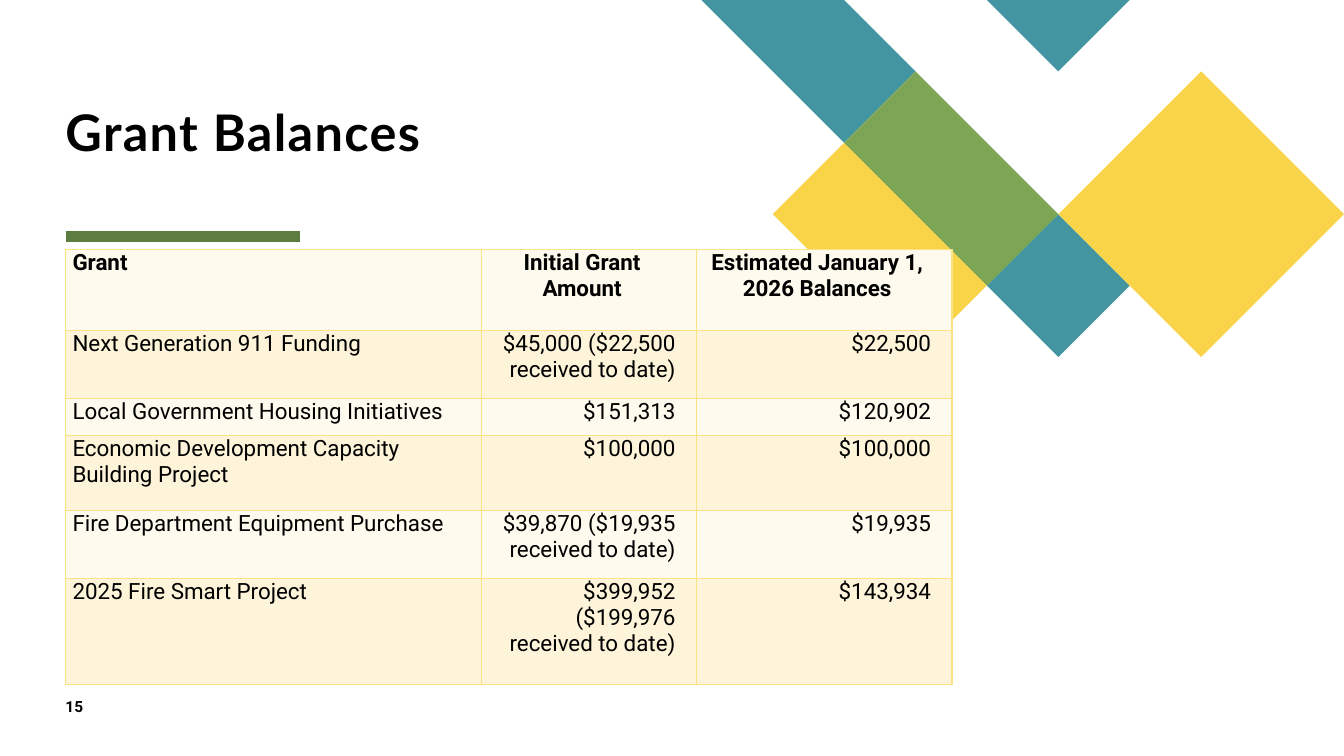
from pptx import Presentation
from pptx.dml.color import RGBColor
from pptx.enum.shapes import MSO_CONNECTOR
from pptx.enum.text import MSO_ANCHOR, PP_ALIGN
from pptx.oxml.ns import qn
from pptx.util import Pt
from lxml import etree

STRAIGHT = MSO_CONNECTOR.STRAIGHT
TOP, BOTTOM = MSO_ANCHOR.TOP, MSO_ANCHOR.BOTTOM
LEFT, CENTER, RIGHT = PP_ALIGN.LEFT, PP_ALIGN.CENTER, PP_ALIGN.RIGHT

BLACK = RGBColor(0x00, 0x00, 0x00)
TEAL = RGBColor(0x44, 0x95, 0xA2)
YELLOW = RGBColor(0xF9, 0xD4, 0x48)
GREEN = RGBColor(0x7C, 0xA6, 0x55)
DARK_GREEN = RGBColor(0x5D, 0x7D, 0x40)
ROW_TINTS = (RGBColor(0xFE, 0xFA, 0xED), RGBColor(0xFD, 0xF4, 0xD9))
GRID_LINE = RGBColor(0xFB, 0xE2, 0x84)

DIAMONDS = [
    (TEAL, [(0, 0), (2, 0), (3, 1), (2, 2)]),
    (TEAL, [(5, 3), (6, 4), (5, 5), (4, 4)]),
    (YELLOW, [(2, 2), (4, 4), (3, 5), (1, 3)]),
    (TEAL, [(4, 0), (6, 0), (5, 1)]),
    (GREEN, [(3, 1), (5, 3), (4, 4), (2, 2)]),
    (YELLOW, [(7, 1), (9, 3), (7, 5), (5, 3)]),
]

GRANTS = [
    ("Grant", "Initial Grant Amount", "Estimated January 1, 2026 Balances"),
    ("Next Generation 911 Funding", "$45,000 ($22,500 received to date)", "$22,500"),
    ("Local Government Housing Initiatives", "$151,313", "$120,902"),
    ("Economic Development Capacity Building Project", "$100,000", "$100,000"),
    ("Fire Department Equipment Purchase", "$39,870 ($19,935 received to date)", "$19,935"),
    ("2025 Fire Smart Project", "$399,952 ($199,976 received to date)", "$143,934"),
]
COLUMN_WIDTHS = (297.3, 153.4, 182.5)
ROW_HEIGHTS = (57.8, 48.7, 26.5, 53.5, 48.7, 75.5)


def style_paragraph(paragraph, size, face, bold=True):
    for run in paragraph.runs:
        run.font.size = Pt(size)
        run.font.name = face
        run.font.bold = bold
        run.font.color.rgb = BLACK


def add_label(slide, left, top, width, height, text, size, face, anchor):
    label = slide.shapes.add_textbox(Pt(left), Pt(top), Pt(width), Pt(height))
    frame = label.text_frame
    frame.word_wrap = True
    frame.vertical_anchor = anchor
    frame.margin_left = frame.margin_right = frame.margin_top = frame.margin_bottom = 0
    frame.text = text
    paragraph = frame.paragraphs[0]
    style_paragraph(paragraph, size, face)
    return paragraph


def add_diamonds(slide, left, top, step):
    for color, corners in DIAMONDS:
        builder = slide.shapes.build_freeform(*corners[0], scale=Pt(step))
        builder.add_line_segments(corners[1:], close=True)
        diamond = builder.convert_to_shape(Pt(left), Pt(top))
        diamond.shadow.inherit = False
        diamond.fill.solid()
        diamond.fill.fore_color.rgb = color
        diamond.line.fill.background()


def add_heading(slide, left, top, width, height):
    title = add_label(slide, left, top, width, height, "Grant Balances", 36, "Lato", BOTTOM)
    title.line_spacing = 0.8
    title.runs[0].font._element.set("spc", "100")
    rule_y = top + height + 54
    rule = slide.shapes.add_connector(
        STRAIGHT, Pt(left), Pt(rule_y), Pt(left + 167.5), Pt(rule_y))
    rule.line.color.rgb = DARK_GREEN
    rule.line.width = Pt(8)
    etree.SubElement(rule._element.spPr, qn("a:effectLst"))


def add_cell_borders(cell):
    properties = cell._tc.get_or_add_tcPr()
    for side in ("a:lnL", "a:lnR", "a:lnT", "a:lnB"):
        border = etree.SubElement(properties, qn(side), w=str(Pt(1)))
        paint = etree.SubElement(border, qn("a:solidFill"))
        etree.SubElement(paint, qn("a:srgbClr"), val=str(GRID_LINE))


def add_grant_table(slide, left, top):
    table = slide.shapes.add_table(
        len(GRANTS), len(COLUMN_WIDTHS), Pt(left), Pt(top),
        Pt(sum(COLUMN_WIDTHS)), Pt(sum(ROW_HEIGHTS))).table
    table.first_row = table.horz_banding = False
    for column, width in zip(table.columns, COLUMN_WIDTHS):
        column.width = Pt(width)
    for r, (grant, height) in enumerate(zip(GRANTS, ROW_HEIGHTS)):
        table.rows[r].height = Pt(height)
        for c, text in enumerate(grant):
            cell = table.cell(r, c)
            add_cell_borders(cell)
            cell.fill.solid()
            cell.fill.fore_color.rgb = ROW_TINTS[r % 2]
            cell.margin_left = Pt(5)
            cell.margin_right = Pt(15 if c else 5)
            cell.margin_top = cell.margin_bottom = 0
            cell.text_frame.text = text
            paragraph = cell.text_frame.paragraphs[0]
            paragraph.space_after = Pt(6)
            paragraph.alignment = LEFT if c == 0 else CENTER if r == 0 else RIGHT
            style_paragraph(paragraph, 16, "Roboto", bold=r == 0)


def main():
    deck = Presentation()
    deck.slide_width, deck.slide_height = Pt(960), Pt(540)
    slide = deck.slides.add_slide(deck.slide_layouts[6])
    add_diamonds(slide, 501, 0, 51)
    add_heading(slide, 46.8, 51.8, 534, 63.4)
    add_grant_table(slide, 46.8, 178.3)
    add_label(slide, 46.8, 498.2, 41, 19.4, "15", 11, "Roboto", TOP)
    deck.save("out.pptx")


if __name__ == "__main__":
    main()
